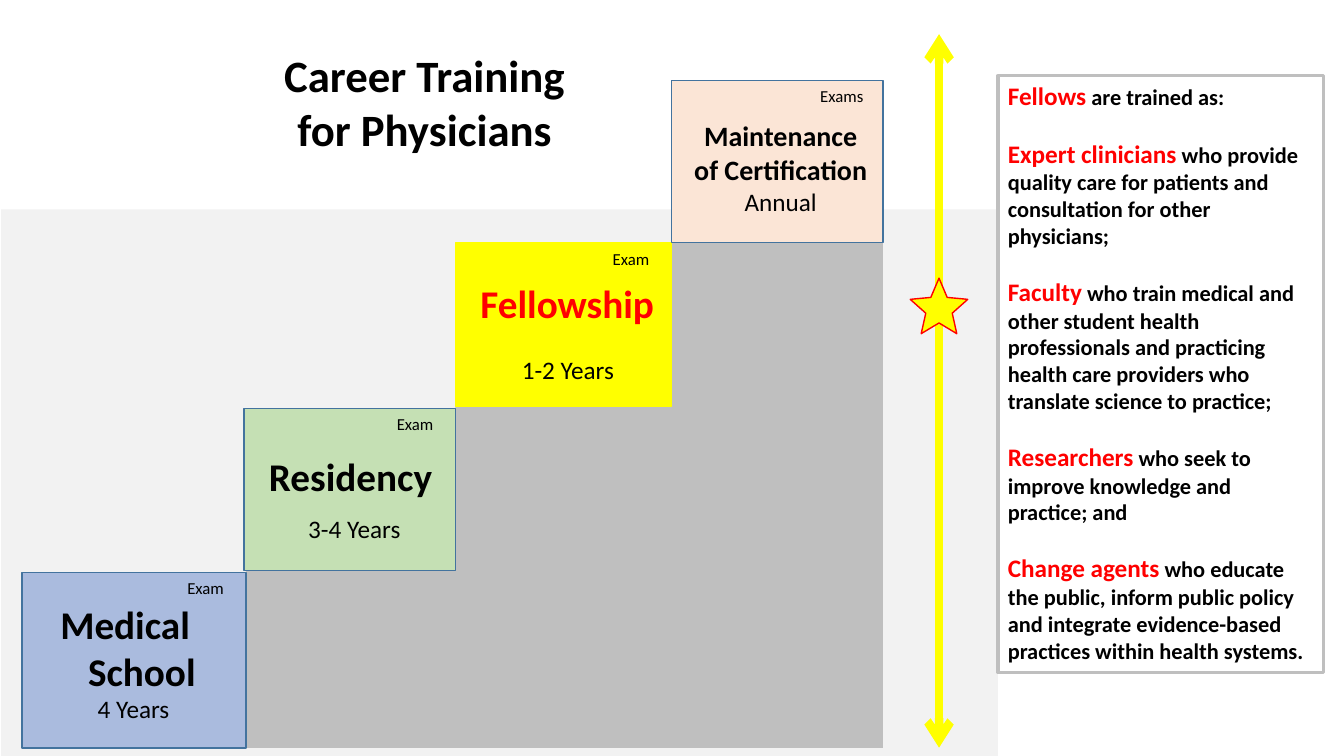
"""Build the slide on career training for physicians."""
import pptx
import pptx.dml.color
import pptx.enum.shapes
import pptx.enum.text
import pptx.oxml
import pptx.oxml.ns
import pptx.util
from lxml import etree

Cm = pptx.util.Cm
Pt = pptx.util.Pt
RGBColor = pptx.dml.color.RGBColor
Shape = pptx.enum.shapes.MSO_SHAPE
Align = pptx.enum.text.PP_ALIGN
Anchor = pptx.enum.text.MSO_ANCHOR
qn = pptx.oxml.ns.qn

BLACK = RGBColor(0x00, 0x00, 0x00)
RED = RGBColor(0xFF, 0x00, 0x00)
YELLOW = RGBColor(0xFF, 0xFF, 0x00)
PALE_GREY = RGBColor(0xF2, 0xF2, 0xF2)
GREY = RGBColor(0xBF, 0xBF, 0xBF)
BLUE_EDGE = RGBColor(0x43, 0x73, 0x9E)
BLUE = RGBColor(0xAA, 0xBB, 0xDE)
GREEN = RGBColor(0xC5, 0xE0, 0xB4)
PEACH = RGBColor(0xFB, 0xE5, 0xD6)

EXAM = {"size": Pt(12)}
YEARS = {"size": Pt(18)}
STAGE = {"size": Pt(28), "bold": True}
FELLOWSHIP = {"size": Pt(28), "bold": True, "color": RED}
CERTIFICATION = {"size": Pt(20), "bold": True}
ROLE = {"size": Pt(18), "bold": True, "color": RED}
DETAIL = {"size": Pt(16), "bold": True}

STAIR_BOTTOM = 18.85
STAIR_BLOCKS = [(6.2, 13.16, 6.1), (11.48, 8.69, 7.14), (16.76, 6.12, 5.49)]

STEPS = [
    ((0.56, 14.43, 5.64, 4.42), BLUE, BLUE_EDGE, [
        ((0.71, 0.58, 4.3, 2.64), Align.LEFT, 0.7, [("Medical School", STAGE)]),
        ((0, 2.92, 5.61, 1.02), Align.CENTER, 0, [("4 Years", YEARS)]),
        ((3.91, 0, 1.7, 0.76), Align.LEFT, 0, [("Exam", EXAM)])]),
    ((6.15, 10.29, 5.33, 4.09), GREEN, BLUE_EDGE, [
        ((0.38, 0.99, 4.95, 1.45), Align.LEFT, 0, [("Residency", STAGE)]),
        ((0.2, 2.51, 5.16, 1.02), Align.CENTER, 0, [("3-4 Years", YEARS)]),
        ((3.6, 0, 1.73, 0.76), Align.LEFT, 0, [("Exam", EXAM)])]),
    ((11.48, 6.12, 5.44, 4.11), YELLOW, YELLOW, [
        ((0.38, 0.79, 5.36, 1.45), Align.LEFT, 0, [("Fellowship", FELLOWSHIP)]),
        ((1.42, 2.69, 3.23, 1.02), Align.LEFT, 0, [("1-2 Years", YEARS)]),
        ((3.71, 0.03, 1.73, 0.76), Align.LEFT, 0, [("Exam", EXAM)])]),
    ((16.92, 2.03, 5.33, 4.09), PEACH, BLUE_EDGE, [
        ((0.28, 0.84, 4.95, 2.74), Align.CENTER, 0,
         [("Maintenance of Certification", CERTIFICATION), ("Annual", YEARS)]),
        ((3.5, 0, 1.73, 0.76), Align.LEFT, 0, [("Exams", EXAM)])]),
]

FELLOW_ROLES = [
    ("Fellows", " are trained as:"),
    ("Expert clinicians", " who provide quality care for patients and "
     "consultation for other physicians;"),
    ("Faculty", " who train medical and other student health professionals and "
     "practicing health care providers who translate science to practice;"),
    ("Researchers", " who seek to improve knowledge and practice; and"),
    ("Change agents", " who educate the public, inform public policy and "
     "integrate evidence-based practices within health systems."),
]


def add_run(paragraph, text, formats):
    """Add a run and set its font from a dict of format values."""
    run = paragraph.add_run()
    run.text = text
    values = {"name": "Calibri", "bold": False, "color": BLACK, **formats}
    run.font.color.rgb = values.pop("color")
    for name, value in values.items():
        setattr(run.font, name, value)


def write_lines(frame, lines, alignment, hang=0):
    """Write one paragraph per line, with a hanging indent in centimetres."""
    for index, (text, formats) in enumerate(lines):
        paragraph = frame.paragraphs[0] if index == 0 else frame.add_paragraph()
        paragraph.alignment = alignment
        if hang:
            properties = paragraph._p.get_or_add_pPr()
            properties.set("marL", str(Cm(hang)))
            properties.set("indent", str(-Cm(hang)))
        add_run(paragraph, text, formats)


def add_block(slide, box, fill=None, line=None, weight=1, kind=Shape.RECTANGLE):
    """Add a shape with a flat fill and outline, either of which may be absent."""
    shape = slide.shapes.add_shape(kind, *map(Cm, box))
    shape.shadow.inherit = False
    if fill is None:
        shape.fill.background()
    else:
        shape.fill.solid()
        shape.fill.fore_color.rgb = fill
    if line is None:
        shape.line.fill.background()
    else:
        shape.line.color.rgb = line
        shape.line.width = Pt(weight)
    return shape


def add_title(slide, box):
    """Place the two-line title."""
    title = slide.shapes.title
    lengths = zip(("left", "top", "width", "height"), map(Cm, box))
    for name, value in lengths:
        setattr(title, name, value)
    title.text_frame.word_wrap = True
    title.text_frame.vertical_anchor = Anchor.TOP
    write_lines(title.text_frame,
                [("Career Training", {"size": Pt(32), "bold": True}),
                 ("for Physicians", {"size": Pt(32), "bold": True})], Align.CENTER)


def add_sidebar(slide, box):
    """Add the outlined list of what fellows are trained as."""
    frame = add_block(slide, box, line=GREY, weight=2.25).text_frame
    frame.word_wrap = True
    frame.vertical_anchor = Anchor.TOP
    for index, (role, detail) in enumerate(FELLOW_ROLES):
        paragraph = frame.paragraphs[0] if index == 0 else frame.add_paragraph()
        paragraph.alignment = Align.LEFT
        paragraph.space_before = Pt(19.5 if index else 0)
        add_run(paragraph, role, ROLE)
        add_run(paragraph, detail, DETAIL)


def add_step(slide, box, fill, line, labels):
    """Add one career stage with its labels placed relative to the box."""
    add_block(slide, box, fill, line)
    for (left, top, width, height), alignment, hang, lines in labels:
        label = slide.shapes.add_textbox(
            Cm(box[0] + left), Cm(box[1] + top), Cm(width), Cm(height))
        label.text_frame.word_wrap = True
        write_lines(label.text_frame, lines, alignment, hang)


def add_timeline(slide, box):
    """Add the double-headed arrow with a star marking the fellowship."""
    left, top, width, height = box
    middle = Cm(left + width / 2)
    arrow = slide.shapes.add_connector(
        pptx.enum.shapes.MSO_CONNECTOR.STRAIGHT, middle, Cm(top), middle, Cm(top + height))
    arrow.line.color.rgb = YELLOW
    arrow.line.width = Pt(6)
    outline = arrow.line._get_or_add_ln()
    for end in ("a:headEnd", "a:tailEnd"):
        etree.SubElement(outline, qn(end)).set("type", "arrow")
    etree.SubElement(arrow._element.spPr, qn("a:effectLst"))
    star = add_block(slide, (left, top + 6.15, width, 1.4), YELLOW, RED,
                     kind=Shape.STAR_5_POINT)
    star.adjustments[0] = 0.23


def main():
    """Build and save the slide."""
    presentation = pptx.Presentation()
    presentation.slide_width = Cm(33.87)
    presentation.slide_height = Cm(19.05)
    slide = presentation.slides.add_slide(presentation.slide_layouts[5])
    add_block(slide, (0.03, 5.28, 25.12, 13.77), PALE_GREY)
    add_title(slide, (4.5, 1.07, 12.4, 3))
    add_sidebar(slide, (25.15, 1.91, 8.2, 15.04))
    for left, top, width in STAIR_BLOCKS:
        add_block(slide, (left, top, width, STAIR_BOTTOM - top), GREY)
    for step in STEPS:
        add_step(slide, *step)
    add_timeline(slide, (22.94, 0.86, 1.45, 17.98))
    presentation.save("out.pptx")


if __name__ == "__main__":
    main()
